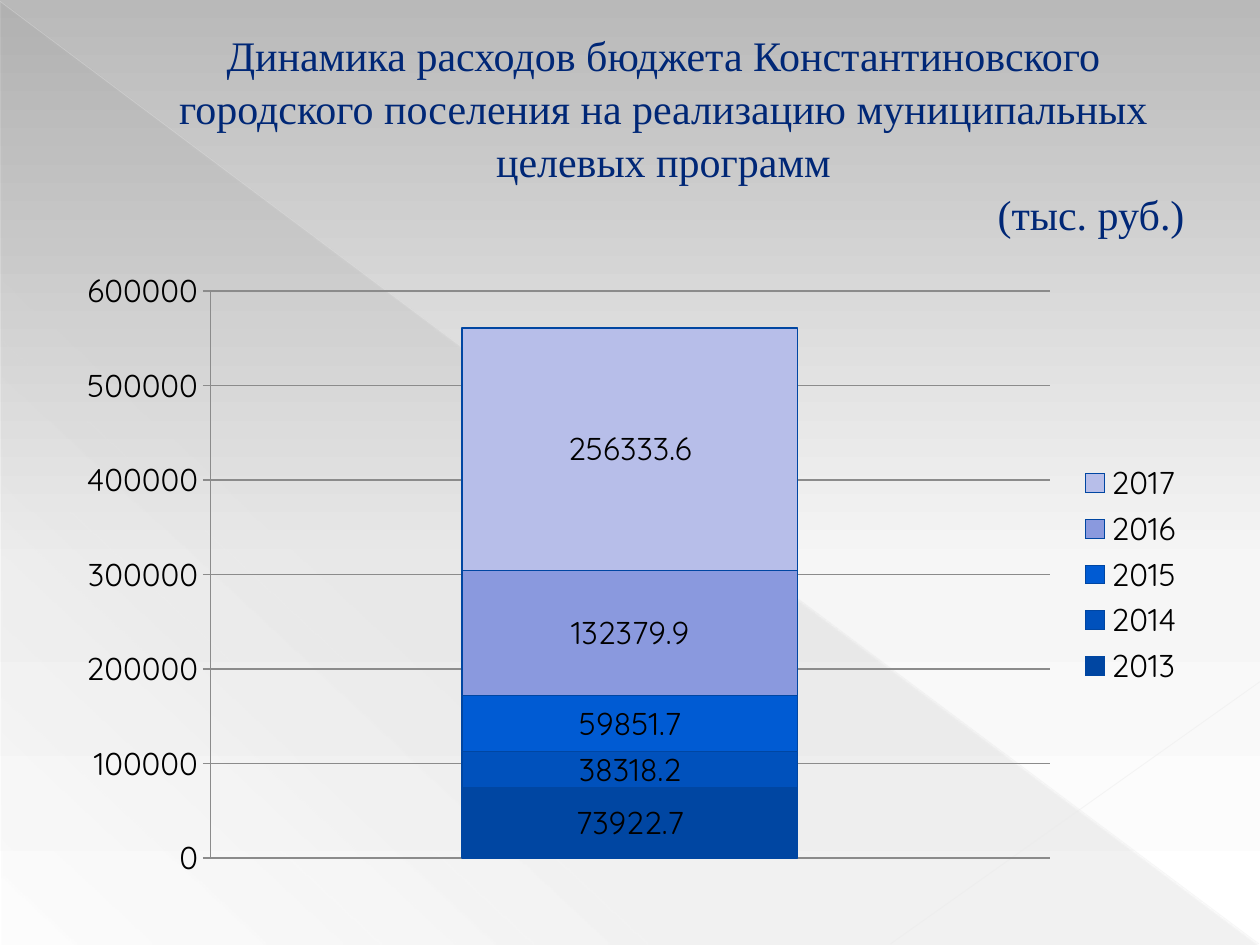
from lxml import etree
from pptx import Presentation
from pptx.chart.data import CategoryChartData
from pptx.dml.color import RGBColor
from pptx.enum import chart as ch, shapes, text
from pptx.oxml import parse_xml
from pptx.oxml.ns import nsdecls, qn
from pptx.util import Inches, Pt

NAVY = RGBColor(0x00, 0x27, 0x76)
BLACK = RGBColor(0, 0, 0)
GRID = RGBColor(0x8B, 0x8B, 0x8B)
BAR_EDGE = RGBColor(0x00, 0x46, 0xA2)

TITLE = [
    ("Динамика расходов бюджета Константиновского городского поселения "
     "на реализацию муниципальных целевых программ", text.PP_ALIGN.CENTER),
    ("(тыс. руб.)", text.PP_ALIGN.RIGHT),
]
EXPENSES = [
    ("2013", 73922.7, RGBColor(0x00, 0x46, 0xA2)),
    ("2014", 38318.2, RGBColor(0x00, 0x51, 0xBC)),
    ("2015", 59851.7, RGBColor(0x00, 0x5B, 0xD3)),
    ("2016", 132379.9, RGBColor(0x8A, 0x99, 0xDE)),
    ("2017", 256333.6, RGBColor(0xB7, 0xBE, 0xE9)),
]
BACKDROP = [(0, "B9B9B9", 100), (60, "F6F6F6", 100), (100, "FFFFFF", 100)]
SHADE = [(0, "666666", 10), (70, "666666", 8), (100, "666666", 1)]
RAYS = [
    ((0, 0.01), (9.99, 7.49), RGBColor(0xE8, 0xE8, 0xE8), 0.39, 35),
    ((10, 5.41), (7.07, 7.49), RGBColor(0xEA, 0xEA, 0xEA), 0.47, 45),
]
PLOT_AREA = {"x": 0.13, "y": 0.05, "w": 0.74, "h": 0.9}


def set_gradient(parent, stops, angle):
    stop_xml = "".join(
        f'<a:gs pos="{pos * 1000}"><a:srgbClr val="{color}">'
        f'<a:alpha val="{alpha * 1000}"/></a:srgbClr></a:gs>'
        for pos, color, alpha in stops)
    gradient = parse_xml(
        f'<a:gradFill {nsdecls("a")} rotWithShape="1"><a:gsLst>{stop_xml}</a:gsLst>'
        f'<a:lin ang="{angle * 60000}" scaled="0"/></a:gradFill>')
    solid = parent.find(qn("a:solidFill"))
    parent.replace(solid, gradient)


def add_backdrop(slide):
    slide.background.fill.solid()
    slide.background.fill.fore_color.rgb = RGBColor(255, 255, 255)
    set_gradient(slide.element.xpath(".//p:bgPr")[0], BACKDROP, 90)

    shade = slide.shapes.add_shape(
        shapes.MSO_SHAPE.RIGHT_TRIANGLE,
        Inches(0.01), Inches(0.02), Inches(9.98), Inches(7.48))
    shade.shadow.inherit = False
    shade.fill.solid()
    set_gradient(shade.element.spPr, SHADE, 133)
    shade.line.fill.background()

    for start, end, color, width, opacity in RAYS:
        ray = slide.shapes.add_connector(
            shapes.MSO_CONNECTOR.STRAIGHT, *map(Inches, start + end))
        ray.line.color.rgb = color
        ray.line.width = Pt(width)
        tint = ray.element.spPr.find(".//" + qn("a:srgbClr"))
        etree.SubElement(tint, qn("a:alpha")).set("val", str(opacity * 1000))
        etree.SubElement(ray.element.spPr, qn("a:effectLst"))


def add_title(slide):
    frame = slide.shapes.add_textbox(
        Inches(0.5), Inches(0.29), Inches(9), Inches(1.53)).text_frame
    frame.word_wrap = True
    frame.vertical_anchor = text.MSO_ANCHOR.MIDDLE
    frame.margin_left = Inches(0.63)
    for i, (line, alignment) in enumerate(TITLE):
        paragraph = frame.add_paragraph() if i else frame.paragraphs[0]
        paragraph.text = line
        paragraph.alignment = alignment
        paragraph.line_spacing = 1.05
        paragraph.font.name = "Times New Roman"
        paragraph.font.size = Pt(24)
        paragraph.font.color.rgb = NAVY


def add_expense_chart(slide):
    data = CategoryChartData()
    data.categories = ["1"]
    for year, amount, _ in EXPENSES:
        data.add_series(year, [amount])
    chart = slide.shapes.add_chart(
        ch.XL_CHART_TYPE.COLUMN_STACKED,
        Inches(0.5), Inches(2.06), Inches(9), Inches(5), data).chart
    chart.has_title = False
    chart.font.name = "Quicksand"
    chart.font.size = Pt(18)
    chart.font.color.rgb = BLACK
    chart.has_legend = True
    chart.legend.position = ch.XL_LEGEND_POSITION.RIGHT
    chart.legend.include_in_layout = False

    chart.category_axis.visible = False
    amounts = chart.value_axis
    amounts.minimum_scale, amounts.maximum_scale = 0, 600000
    amounts.major_unit = 100000
    amounts.major_tick_mark = ch.XL_TICK_MARK.OUTSIDE
    amounts.tick_labels.number_format = "General"
    amounts.tick_labels.number_format_is_linked = False
    for line in (amounts.format.line, amounts.major_gridlines.format.line):
        line.color.rgb = GRID
        line.width = Pt(0.75)

    plot = chart.plots[0]
    plot.gap_width, plot.overlap = 150, 100
    plot.vary_by_categories = False
    for series, (_, _, color) in zip(plot.series, EXPENSES):
        series.format.fill.solid()
        series.format.fill.fore_color.rgb = color
        series.format.line.color.rgb = BAR_EDGE
        series.format.line.width = Pt(0.75)
        labels = series.data_labels
        labels.show_value = True
        labels.number_format = "General"
        labels.number_format_is_linked = False
        labels.position = ch.XL_LABEL_POSITION.CENTER

    plot_area = chart.element.xpath(".//c:plotArea")[0]
    for old_layout in plot_area.findall(qn("c:layout")):
        plot_area.remove(old_layout)
    modes = '<c:xMode val="edge"/><c:yMode val="edge"/>'
    sizes = "".join(f'<c:{side} val="{share}"/>' for side, share in PLOT_AREA.items())
    plot_area.insert(0, parse_xml(
        f'<c:layout {nsdecls("c")}><c:manualLayout><c:layoutTarget val="inner"/>'
        f'{modes}{sizes}</c:manualLayout></c:layout>'))


def main():
    deck = Presentation()
    deck.slide_width, deck.slide_height = Inches(10), Inches(7.5)
    slide = deck.slides.add_slide(deck.slide_layouts[6])
    add_backdrop(slide)
    add_title(slide)
    add_expense_chart(slide)
    deck.save("out.pptx")


if __name__ == "__main__":
    main()
